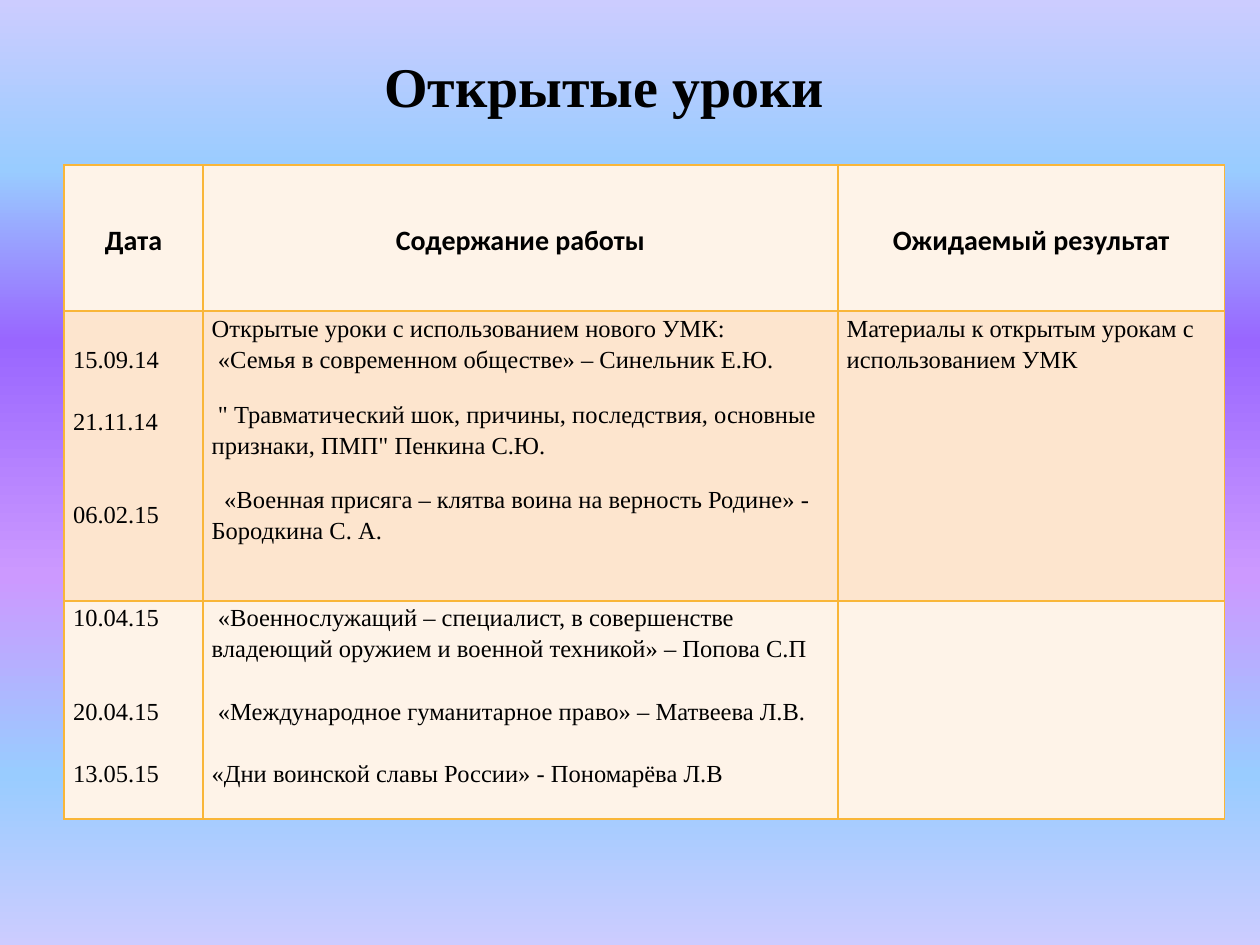
"""Build the slide listing open lessons by date, content and expected result."""
from lxml import etree
from pptx import Presentation
from pptx import util as u
from pptx.dml.color import RGBColor
from pptx.enum import text
from pptx.oxml.ns import qn


def color(value):
    return RGBColor.from_string(value)


def add_fill(parent, tag, value):
    holder = etree.SubElement(parent, qn(tag))
    etree.SubElement(holder, qn("a:srgbClr"), val=value)
    return holder


SERIF = "Times New Roman"
LINE = 17.8
LIGHT, DARK = "FEF3E8", "FDE5CE"
STOPS = [(0, "CCCCFF"), (18, "99CCFF"), (36, "9966FF"),
         (61, "CC99FF"), (82, "99CCFF"), (100, "CCCCFF")]
COLUMNS = [1.1, 5.04, 3.07]
ROWS = [(1.16, LIGHT), (2.3, DARK), (1.73, LIGHT)]
HEADINGS = ["Дата", "Содержание работы", "Ожидаемый результат"]

# Each paragraph: wording, space before in points, first-line indent in inches.
LESSONS = [
    [
        [("15.09.14", 0, 0), ("21.11.14", LINE, 0), ("06.02.15", 2 * LINE, 0)],
        [("Открытые уроки с использованием нового УМК:", 0, 0),
         ("«Семья в современном обществе» – Синельник Е.Ю.", 0, 0.05),
         ("\" Травматический шок, причины, последствия, основные признаки, ПМП\" Пенкина С.Ю.",
          14, 0.05),
         ("«Военная присяга – клятва воина на верность Родине» - Бородкина С. А.", 12.7, 0.1)],
        [("Материалы к открытым урокам с использованием УМК", 0, 0)],
    ],
    [
        [("10.04.15", 0, 0), ("20.04.15", 2 * LINE, 0), ("13.05.15", LINE, 0)],
        [("«Военнослужащий – специалист, в совершенстве владеющий оружием "
          "и военной техникой» – Попова С.П", 0, 0.05),
         ("«Международное гуманитарное право» – Матвеева Л.В.", LINE, 0.05),
         ("«Дни воинской славы России» - Пономарёва Л.В", LINE, 0)],
        [],
    ],
]

deck = Presentation()
deck.slide_width, deck.slide_height = u.Inches(10), u.Inches(7.5)
page = deck.slides.add_slide(deck.slide_layouts[6])

backdrop = page.background.fill
backdrop.gradient()
backdrop.gradient_angle = 270
stop_list = next(page.background._cSld.iter(qn("a:gsLst")))
for stop in list(stop_list):
    stop_list.remove(stop)
for position, value in STOPS:
    add_fill(stop_list, "a:gs", value).set("pos", str(position * 1000))

table = page.shapes.add_table(3, 3, u.Inches(0.51), u.Inches(1.31),
                              u.Inches(9.21), u.Inches(5.19)).table
table.horz_banding = False
for column, width in zip(table.columns, COLUMNS):
    column.width = u.Inches(width)

contents = [[[(heading, 0, 0)] for heading in HEADINGS]] + LESSONS
for row_index, (height, shade) in enumerate(ROWS):
    table.rows[row_index].height = u.Inches(height)
    is_header = row_index == 0
    for column_index, lines in enumerate(contents[row_index]):
        cell = table.cell(row_index, column_index)
        cell.margin_left = cell.margin_right = u.Inches(0.07)
        cell.margin_top = cell.margin_bottom = 0
        if (row_index, column_index) == (1, 0):
            cell.margin_top = u.Pt(LINE)
        cell.vertical_anchor = text.MSO_ANCHOR.MIDDLE if is_header else text.MSO_ANCHOR.TOP

        properties = cell._tc.get_or_add_tcPr()
        for side in ("a:lnL", "a:lnR", "a:lnT", "a:lnB"):
            border = etree.SubElement(properties, qn(side), w=str(u.Pt(1)))
            add_fill(border, "a:solidFill", "F9B639")
        cell.fill.solid()
        cell.fill.fore_color.rgb = color(shade)

        for index, (wording, space, indent) in enumerate(lines):
            frame = cell.text_frame
            para = frame.paragraphs[0] if index == 0 else frame.add_paragraph()
            para.text = wording
            para.line_spacing = 1.15
            para.space_before = u.Pt(space)
            para.alignment = text.PP_ALIGN.CENTER if is_header else text.PP_ALIGN.LEFT
            para._p.get_or_add_pPr().set("indent", str(u.Inches(indent)))
            para.font.name = "Calibri" if is_header else SERIF
            para.font.size = u.Pt(16 if is_header else 14)
            para.font.bold = is_header
            para.font.color.rgb = color("000000")

title = page.shapes.add_textbox(u.Inches(2.95), u.Inches(0.36), u.Inches(4.88), u.Inches(0.64))
title.text_frame.word_wrap = True
para = title.text_frame.paragraphs[0]
para.text = "Открытые уроки"
para.font.name = SERIF
para.font.size = u.Pt(32)
para.font.bold = True
para.font.color.rgb = color("000000")

deck.save("out.pptx")
